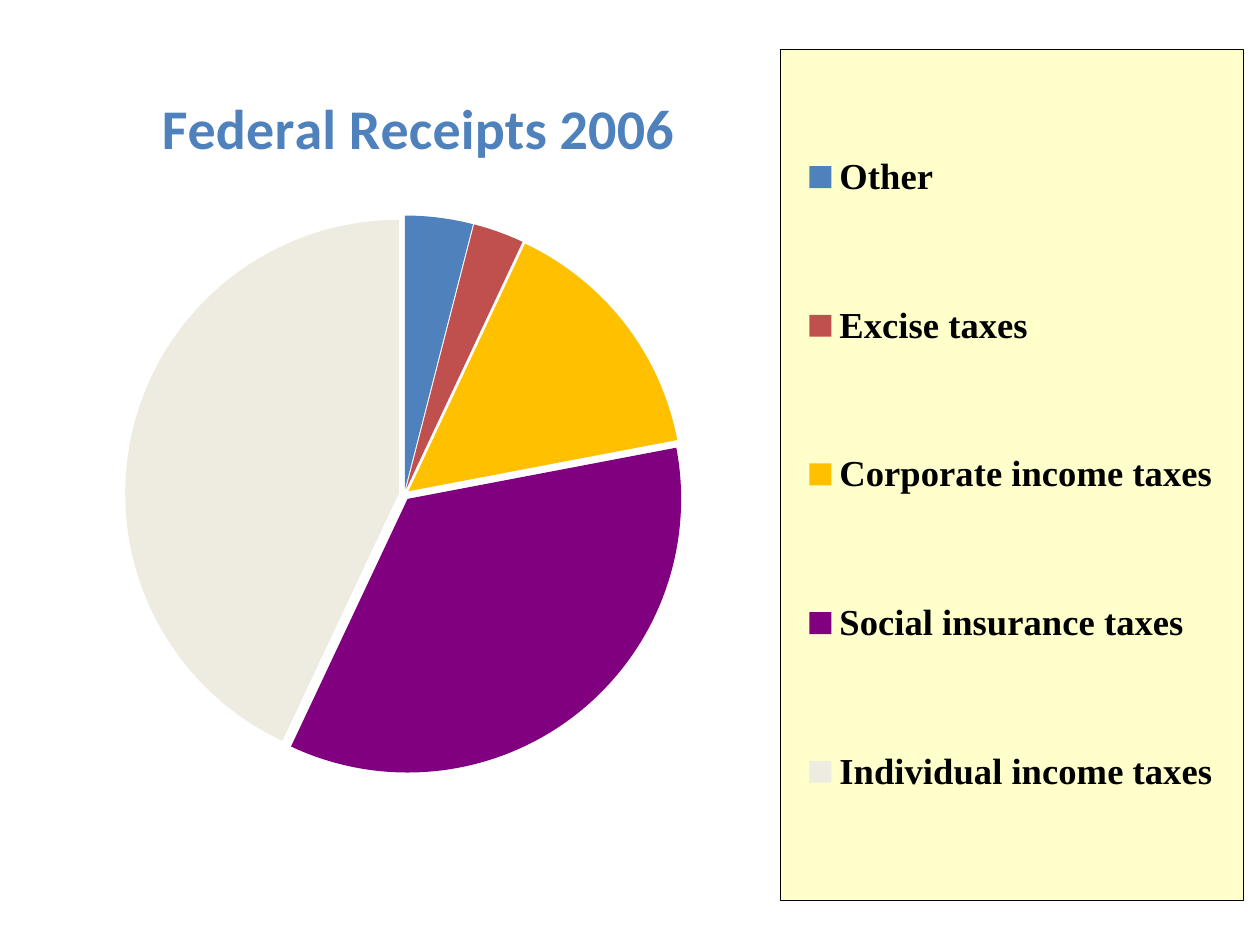
"""Builds a slide with a pie chart of federal receipts in 2006."""
import pptx
import pptx.chart.data
import pptx.dml.color
import pptx.enum.chart
import pptx.oxml
import pptx.oxml.ns
import pptx.util
from pptx.util import Inches

RECEIPTS = [
    ("Other", 4, "4F81BD"),
    ("Excise taxes", 3, "C0504D"),
    ("Corporate income taxes", 15, "FFC000"),
    ("Social insurance taxes", 35, "800080"),
    ("Individual income taxes", 43, "EEECE1"),
]


def color(value):
    return pptx.dml.color.RGBColor.from_string(value)


def chart_xml(body):
    start, rest = body.split(" ", 1)
    return pptx.oxml.parse_xml(f"{start} {pptx.oxml.ns.nsdecls('c', 'a')} {rest}")


class ReceiptsSlide:
    body_font = "Times New Roman"
    title_font = "Calibri"
    ink = "000000"
    accent = "4F81BD"
    legend_fill = "FFFFCC"

    def __init__(self, deck):
        self.slide = deck.slides.add_slide(deck.slide_layouts[6])

    def style(self, font, name, size, hue):
        font.name, font.size, font.bold = name, pptx.util.Pt(size), True
        font.color.rgb = color(hue)

    def place(self, part, index, target="", **fractions):
        for layout in part.findall(pptx.oxml.ns.qn("c:layout")):
            part.remove(layout)
        modes = "".join(f'<c:{axis}Mode val="edge"/>' for axis in "xy")
        sizes = "".join(f'<c:{key} val="{value}"/>' for key, value in fractions.items())
        part.insert(index, chart_xml(
            f"<c:layout ><c:manualLayout>{target}{modes}{sizes}</c:manualLayout></c:layout>"))

    def pie(self, receipts, left, top, width, height):
        names, shares, hues = zip(*receipts)
        data = pptx.chart.data.CategoryChartData()
        data.categories = names
        data.add_series("Series 1", shares)
        chart = self.slide.shapes.add_chart(
            pptx.enum.chart.XL_CHART_TYPE.PIE, left, top, width, height, data).chart
        self.style(chart.font, self.body_font, 18.4, self.ink)
        plot = chart.plots[0]
        plot.vary_by_categories = True
        slices = plot.series[0]
        for number, hue in enumerate(hues):
            fill = slices.points[number].format.fill
            fill.solid()
            fill.fore_color.rgb = color(hue)
        first_slice = chart.element.xpath(".//c:ser/c:dPt")[0]
        first_slice.addprevious(chart_xml('<c:explosion val="2"/>'))
        self.place(chart.element.xpath("c:chart/c:plotArea")[0], 0,
                   '<c:layoutTarget val="inner"/>', x=0.066, y=0.196, w=0.462, h=0.67)
        return chart

    def title(self, chart, text):
        heading = chart.chart_title.text_frame
        heading.text = text
        self.style(heading.paragraphs[0].font, self.title_font, 32, self.accent)
        self.place(chart.element.xpath("c:chart/c:title")[0], 1, x=0.088, y=0.058)

    def legend(self, chart):
        chart.has_legend = True
        chart.legend.position = pptx.enum.chart.XL_LEGEND_POSITION.RIGHT
        chart.legend.include_in_layout = False
        self.style(chart.legend.font, self.body_font, 20.9, self.ink)
        key = chart.element.xpath("c:chart/c:legend")[0]
        self.place(key, 1, x=0.608, y=0.024, w=0.383, h=0.968)
        key.find(pptx.oxml.ns.qn("c:overlay")).addnext(chart_xml(
            f'<c:spPr ><a:solidFill><a:srgbClr val="{self.legend_fill}"/></a:solidFill>'
            f'<a:ln w="3175"><a:solidFill><a:srgbClr val="{self.ink}"/></a:solidFill></a:ln>'
            "</c:spPr>"))


def main():
    deck = pptx.Presentation()
    deck.slide_width, deck.slide_height = Inches(10), Inches(7.5)
    page = ReceiptsSlide(deck)
    receipts = page.pie(RECEIPTS, Inches(0.36), Inches(0.22), Inches(9.59), Inches(6.98))
    page.title(receipts, "Federal Receipts 2006")
    page.legend(receipts)
    deck.save("out.pptx")


if __name__ == "__main__":
    main()
